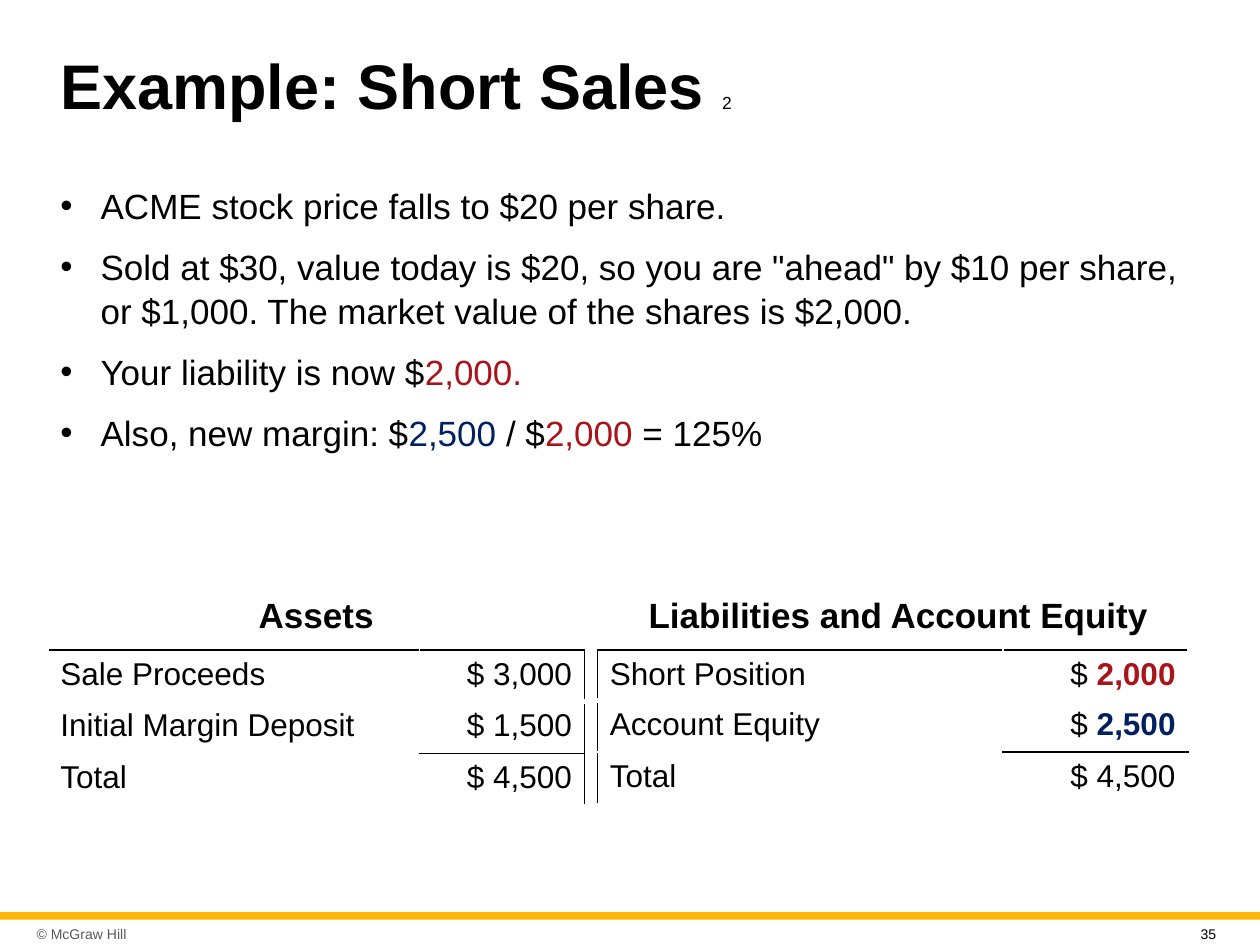
from lxml import etree
from pptx import Presentation
from pptx import util as u
from pptx.dml.color import RGBColor
from pptx.enum import shapes, text
from pptx.oxml import ns

BLACK, WHITE, GREY = "000000", "FFFFFF", "595959"
GOLD, RED, NAVY = "FFB600", "A9131A", "002060"
LEFT, CENTER, RIGHT = text.PP_ALIGN.LEFT, text.PP_ALIGN.CENTER, text.PP_ALIGN.RIGHT
BORDER_TAGS = {"left": "a:lnL", "right": "a:lnR", "top": "a:lnT", "bottom": "a:lnB"}


def color(hex_code):
    return RGBColor.from_string(hex_code)


def add_text(para, content, size=20, ink=BLACK, bold=False):
    """Add one formatted span to a paragraph."""
    span = para.add_run()
    span.text = content
    span.font.name = "Arial"
    span.font.size = u.Pt(size)
    span.font.bold = bold
    span.font.color.rgb = color(ink)


def add_spans(para, spans, **style):
    """Add plain strings and (string, overrides) pairs to a paragraph."""
    for span in [spans] if isinstance(spans, str) else spans:
        content, overrides = (span, {}) if isinstance(span, str) else span
        add_text(para, content, **{**style, **overrides})


def add_bullet(para, indent):
    props = para._p.get_or_add_pPr()
    props.set("marL", str(indent))
    props.set("indent", str(-indent))
    etree.SubElement(props, ns.qn("a:buFont")).set("typeface", "Arial")
    etree.SubElement(props, ns.qn("a:buChar")).set("char", "•")


def set_border(cell, side, ink, width):
    line = etree.SubElement(cell._tc.get_or_add_tcPr(), ns.qn(BORDER_TAGS[side]))
    line.set("w", str(u.Pt(width)))
    fill = etree.SubElement(line, ns.qn("a:solidFill"))
    etree.SubElement(fill, ns.qn("a:srgbClr")).set("val", ink)


class SlideBuilder:
    """Holds the deck style and the current page."""

    def __init__(self, page):
        self.page = page

    def bar(self, left, top, width, height, fill):
        shape = self.page.shapes.add_shape(
            shapes.MSO_SHAPE.RECTANGLE, *map(u.Inches, (left, top, width, height)))
        shape.shadow.inherit = False
        shape.fill.solid()
        shape.fill.fore_color.rgb = color(fill)
        shape.line.fill.background()

    def text(self, left, top, width, height, paragraphs, align=LEFT, middle=False,
             inset=None, spacing=None, bullets=False, **style):
        box = self.page.shapes.add_textbox(*map(u.Inches, (left, top, width, height)))
        frame = box.text_frame
        frame.word_wrap = True
        if middle:
            frame.vertical_anchor = text.MSO_ANCHOR.MIDDLE
        if inset is not None:
            frame.margin_left = frame.margin_right = u.Inches(inset)
            frame.margin_top = frame.margin_bottom = u.Inches(inset)
        for index, spans in enumerate(paragraphs):
            para = frame.add_paragraph() if index else frame.paragraphs[0]
            para.alignment = align
            if spacing:
                para.line_spacing = spacing
            if index:
                para.space_before = u.Pt(10)
            if bullets:
                add_bullet(para, u.Inches(0.32))
            add_spans(para, spans, **style)

    def account(self, left, top, widths, heights, rows, ruled_column, ruled_side):
        """Add one side of the T-account, with its vertical rule on ruled_side."""
        frame = self.page.shapes.add_table(
            len(rows), len(widths), u.Inches(left), u.Inches(top),
            u.Inches(sum(widths)), u.Inches(sum(heights)))
        table = frame.table
        table.first_row = table.horz_banding = False
        for column, width in zip(table.columns, widths):
            column.width = u.Inches(width)
        for row, height in zip(table.rows, heights):
            row.height = u.Inches(height)
        total = len(rows) - 1
        for r, row in enumerate(rows):
            for c, spans in enumerate(row):
                cell = table.cell(r, c)
                borders = {side: (WHITE, 1) for side in BORDER_TAGS}
                if r == 0:
                    borders.update(top=(BLACK, 1), bottom=(WHITE, 3))
                if c == 1 and r == total - 1:
                    borders["bottom"] = (BLACK, 1)
                if c == 1 and r == total:
                    borders["top"] = (BLACK, 1)
                if c == ruled_column:
                    borders[ruled_side] = (BLACK, 1)
                for side, (ink, width) in borders.items():
                    set_border(cell, side, ink, width)
                cell.fill.solid()
                cell.fill.fore_color.rgb = color(WHITE)
                para = cell.text_frame.paragraphs[0]
                para.alignment = RIGHT if c else LEFT
                add_spans(para, spans, size=18)


def main():
    deck = Presentation()
    deck.slide_width, deck.slide_height = u.Inches(10), u.Inches(7.5)
    slide = SlideBuilder(deck.slides.add_slide(deck.slide_layouts[6]))
    red, navy = {"ink": RED}, {"ink": NAVY}

    slide.bar(0, 7.24, 10, 0.06, GOLD)
    slide.text(0.24, 7.29, 1.35, 0.24, ["© McGraw Hill"], middle=True, inset=0.05,
               size=8, ink=GREY)
    slide.text(0.38, 0.21, 9.25, 0.99,
               [["Example: Short Sales ", ("2", {"size": 10, "bold": False})]],
               middle=True, spacing=0.9, size=36, bold=True)
    slide.text(0.38, 1.4, 9.25, 2.24, [
        "ACME stock price falls to $20 per share.",
        "Sold at $30, value today is $20, so you are \"ahead\" by $10 per share, "
        "or $1,000. The market value of the shares is $2,000.",
        ["Your liability is now $", ("2,000.", red)],
        ["Also, new margin: $", ("2,500", navy), " / $", ("2,000", red), " = 125%"],
    ], spacing=1.04, bullets=True)

    slide.text(0.38, 4.65, 4.26, 0.44, ["Assets"], align=CENTER, spacing=1.04, bold=True)
    slide.account(0.38, 5.16, [2.95, 1.31], [0.41, 0.41, 0.41], [
        ["Sale Proceeds", "$ 3,000"],
        ["Initial Margin Deposit", "$ 1,500"],
        ["Total", "$ 4,500"],
    ], ruled_column=1, ruled_side="right")

    slide.text(4.78, 4.65, 4.7, 0.41, ["Liabilities and Account Equity"], align=CENTER,
               spacing=1.04, bold=True)
    slide.account(4.74, 5.16, [3.22, 1.47], [0.38, 0.41, 0.41], [
        ["Short Position", ["$ ", ("2,000", {"ink": RED, "bold": True})]],
        ["Account Equity", ["$ ", ("2,500", {"ink": NAVY, "bold": True})]],
        ["Total", "$ 4,500"],
    ], ruled_column=0, ruled_side="left")

    slide.text(9.43, 7.3, 0.39, 0.18, ["35"], size=8)
    deck.save("out.pptx")


if __name__ == "__main__":
    main()
